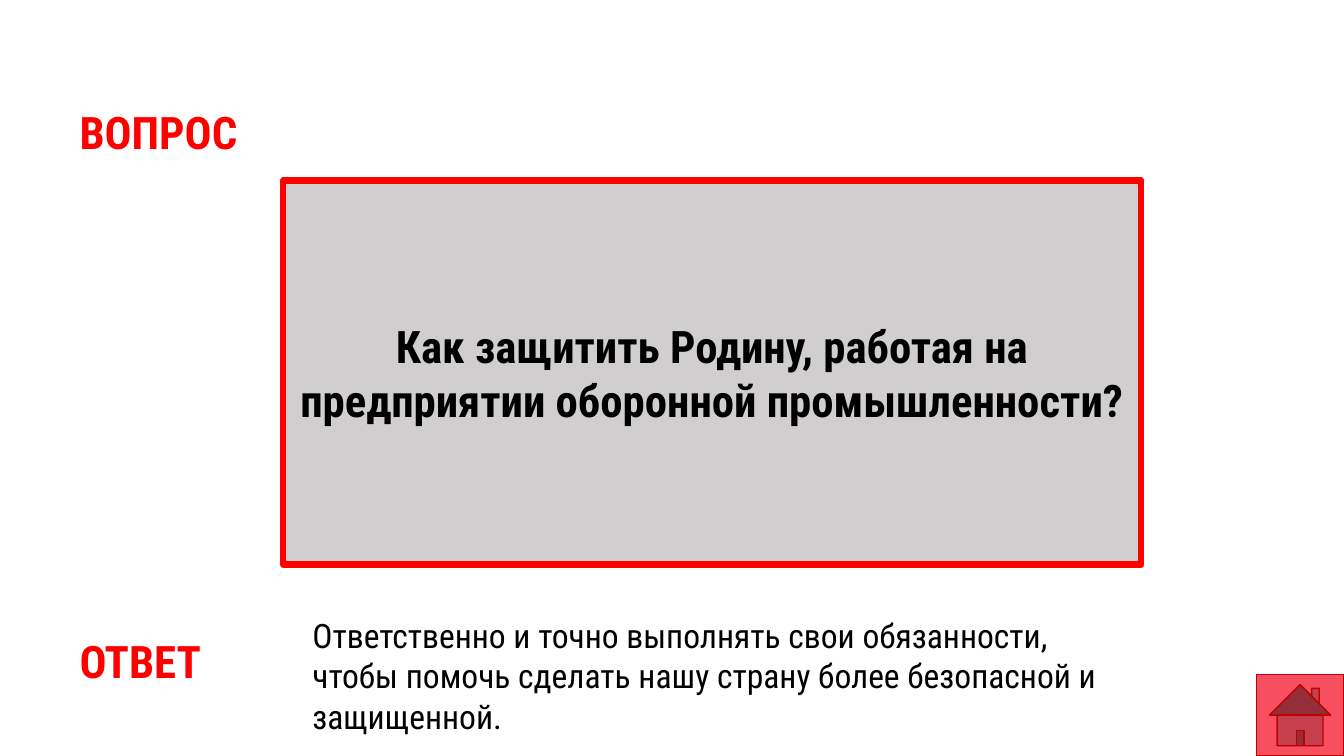
from dataclasses import dataclass

from pptx import Presentation
from pptx.dml.color import RGBColor
from pptx.enum.shapes import MSO_SHAPE
from pptx.enum.text import MSO_ANCHOR, MSO_AUTO_SIZE, PP_ALIGN
from pptx.shapes.autoshape import Shape
from pptx.slide import Slide
from pptx.text.text import TextFrame
from pptx.util import Inches, Pt

FONT = "Roboto Condensed"
RED = "FF0000"
BLACK = "000000"


@dataclass
class Box:
    left: float
    top: float
    width: float
    height: float

    def lengths(self) -> list[Inches]:
        return [Inches(side) for side in (self.left, self.top, self.width, self.height)]


@dataclass
class Label:
    text: str
    box: Box
    color: str = RED
    size: int = 32
    bold: bool = True


LABELS = [
    Label("ВОПРОС", Box(0.69, 0.99, 5.18, 0.64)),
    Label("ОТВЕТ", Box(0.69, 6.24, 1.65, 0.64)),
    Label(
        "Ответственно и точно выполнять свои обязанности, "
        "чтобы помочь сделать нашу страну более безопасной и защищенной.",
        Box(3, 6.05, 8.31, 0.91), BLACK, size=24, bold=False,
    ),
]
QUESTION = Label(
    "Как защитить Родину, работая на предприятии оборонной промышленности?",
    Box(2.81, 1.79, 8.51, 3.81), BLACK,
)
HOME_BUTTON = Box(12.46, 6.69, 0.87, 0.81)


def rgb(color: str) -> RGBColor:
    return RGBColor.from_string(color)


def write(frame: TextFrame, label: Label) -> None:
    frame.word_wrap = True
    para = frame.paragraphs[0]
    para.text = label.text
    para.font.name = FONT
    para.font.size = Pt(label.size)
    para.font.bold = label.bold
    para.font.color.rgb = rgb(label.color)


def add_label(page: Slide, label: Label) -> None:
    frame = page.shapes.add_textbox(*label.box.lengths()).text_frame
    write(frame, label)
    frame.auto_size = MSO_AUTO_SIZE.SHAPE_TO_FIT_TEXT


def add_outlined(page: Slide, kind: MSO_SHAPE, box: Box, fill: str,
                 line: str, line_width: float) -> Shape:
    shape = page.shapes.add_shape(kind, *box.lengths())
    shape.shadow.inherit = False
    shape.fill.solid()
    shape.fill.fore_color.rgb = rgb(fill)
    shape.line.color.rgb = rgb(line)
    shape.line.width = Pt(line_width)
    return shape


def main() -> None:
    deck = Presentation()
    deck.slide_width = Inches(13.33)
    deck.slide_height = Inches(7.5)
    page = deck.slides.add_slide(deck.slide_layouts[6])

    question = add_outlined(page, MSO_SHAPE.RECTANGLE, QUESTION.box, "D0CECE", RED, 4.5)
    write(question.text_frame, QUESTION)
    question.text_frame.vertical_anchor = MSO_ANCHOR.MIDDLE
    question.text_frame.paragraphs[0].alignment = PP_ALIGN.CENTER

    for label in LABELS:
        add_label(page, label)

    add_outlined(page, MSO_SHAPE.ACTION_BUTTON_HOME, HOME_BUTTON, "F74F5F", "C00000", 1)
    deck.save("out.pptx")


if __name__ == "__main__":
    main()
